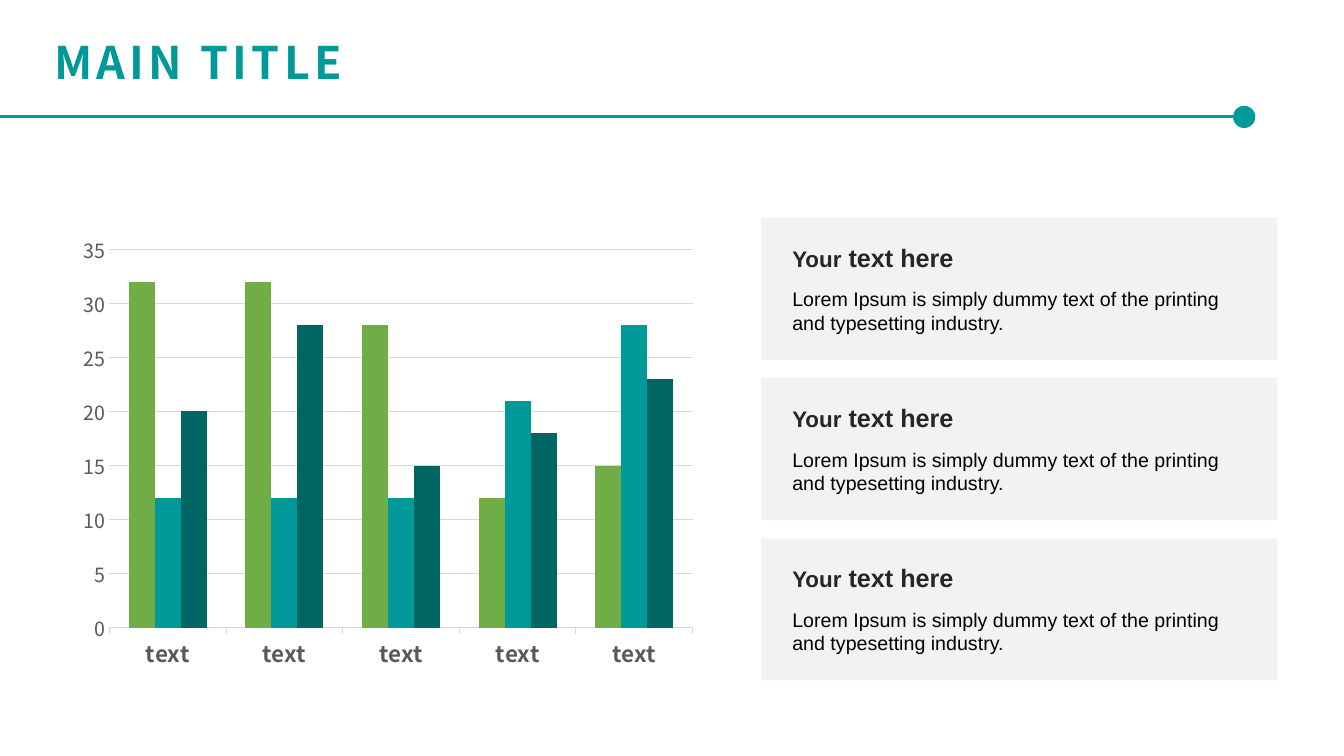
from dataclasses import dataclass

from lxml import etree
from pptx import Presentation
from pptx.chart.data import CategoryChartData
from pptx.dml.color import RGBColor
from pptx.enum.chart import XL_CHART_TYPE as ChartType, XL_TICK_MARK as TickMark
from pptx.enum.shapes import MSO_CONNECTOR as Connector, MSO_SHAPE as Shape
from pptx.enum.text import MSO_AUTO_SIZE as AutoSize
from pptx.oxml import parse_xml
from pptx.oxml.ns import nsdecls, qn
from pptx.util import Inches, Pt


@dataclass(frozen=True)
class Theme:
    teal: str = "009999"
    dark_teal: str = "006664"
    green: str = "70AD47"
    panel: str = "F2F2F2"
    grid: str = "D9D9D9"
    axis: str = "595959"
    heading: str = "262626"
    black: str = "000000"
    display_font: str = "Noto Sans CJK KR"
    text_font: str = "Arial"
    title_size: int = 32
    heading_size: int = 18
    lead_size: int = 16
    body_size: int = 14
    category_size: int = 16
    value_size: int = 14
    chart_size: int = 10


theme = Theme()


def style_font(font, name, size, color, bold=False):
    font.name = name
    font.size = Pt(size)
    font.color.rgb = RGBColor.from_string(color)
    font.bold = bold


def add_filled(kind, left, top, width, height, color):
    shape = slide.shapes.add_shape(kind, Inches(left), Inches(top), Inches(width), Inches(height))
    shape.shadow.inherit = False
    shape.fill.solid()
    shape.fill.fore_color.rgb = RGBColor.from_string(color)
    shape.line.fill.background()


deck = Presentation()
deck.slide_width = Inches(13.33)
deck.slide_height = Inches(7.5)
slide = deck.slides.add_slide(deck.slide_layouts[6])

title_box = slide.shapes.add_textbox(Inches(0.44), Inches(0.3), Inches(3.16), Inches(0.64))
title_box.text_frame.word_wrap = False
title_box.text_frame.auto_size = AutoSize.SHAPE_TO_FIT_TEXT
title_box.text_frame.text = "MAIN TITLE"
title_span = title_box.text_frame.paragraphs[0].runs[0]
style_font(title_span.font, theme.display_font, theme.title_size, theme.teal, True)
title_span.font._element.set("spc", "300")

rule = slide.shapes.add_connector(Connector.STRAIGHT, 0, Inches(1.16), Inches(12.23), Inches(1.16))
rule.line.color.rgb = RGBColor.from_string(theme.teal)
rule.line.width = Pt(2.25)
etree.SubElement(rule._element.spPr, qn("a:effectLst"))
add_filled(Shape.OVAL, 12.23, 1.05, 0.22, 0.22, theme.teal)

series_rows = [
    ("Series 1", (32, 32, 28, 12, 15), theme.green),
    ("Series 2", (12, 12, 12, 21, 28), theme.teal),
    ("Series 3", (20, 28, 15, 18, 23), theme.dark_teal),
]
chart_data = CategoryChartData()
chart_data.categories = ["text"] * 5
for name, values, color in series_rows:
    chart_data.add_series(name, values)
chart = slide.shapes.add_chart(
    ChartType.COLUMN_CLUSTERED, Inches(0.54), Inches(2.16), Inches(6.72), Inches(4.48), chart_data
).chart
chart.has_legend = False
chart.has_title = False
style_font(chart.font, theme.display_font, theme.chart_size, theme.black)

plot = chart.plots[0]
plot.gap_width = 150
plot.overlap = 0
plot.vary_by_categories = False
for series, (name, values, color) in zip(plot.series, series_rows):
    series.format.fill.solid()
    series.format.fill.fore_color.rgb = RGBColor.from_string(color)

category_axis = chart.category_axis
category_axis.major_tick_mark = TickMark.OUTSIDE
category_axis.format.line.color.rgb = RGBColor.from_string(theme.grid)
category_axis.format.line.width = Pt(0.75)
style_font(category_axis.tick_labels.font, theme.display_font, theme.category_size, theme.axis, True)

value_axis = chart.value_axis
value_axis.minimum_scale = 0
value_axis.maximum_scale = 35
value_axis.major_unit = 5
value_axis.major_tick_mark = TickMark.NONE
value_axis.format.line.fill.background()
value_axis.major_gridlines.format.line.color.rgb = RGBColor.from_string(theme.grid)
value_axis.major_gridlines.format.line.width = Pt(0.75)
style_font(value_axis.tick_labels.font, theme.display_font, theme.value_size, theme.axis)

plot_area = chart._chartSpace.chart.plotArea
for old_layout in plot_area.findall(qn("c:layout")):
    plot_area.remove(old_layout)
plot_area.insert(0, parse_xml(
    f'<c:layout {nsdecls("c")}><c:manualLayout><c:layoutTarget val="inner"/>'
    '<c:xMode val="edge"/><c:yMode val="edge"/><c:x val="0.081"/><c:y val="0.07"/>'
    '<c:w val="0.861"/><c:h val="0.84"/></c:manualLayout></c:layout>'
))

body_text = "Lorem Ipsum is simply dummy text of the printing and typesetting industry."
body_style = (theme.text_font, theme.body_size, theme.black)
lead_style = (theme.text_font, theme.lead_size, theme.heading, True)
heading_style = (theme.text_font, theme.heading_size, theme.heading, True)
panel_texts = [
    (0.64, 4.59, 0.57, [(body_text, body_style)]),
    (0.19, 1.9, 0.4, [("Your", lead_style), (" text here", heading_style)]),
]
for row in range(3):
    top = 2.16 + row * 1.59
    add_filled(Shape.RECTANGLE, 7.55, top, 5.12, 1.41, theme.panel)
    for offset, width, height, pieces in panel_texts:
        box = slide.shapes.add_textbox(Inches(7.76), Inches(top + offset), Inches(width), Inches(height))
        box.text_frame.word_wrap = True
        box.text_frame.auto_size = AutoSize.SHAPE_TO_FIT_TEXT
        para = box.text_frame.paragraphs[0]
        for text, style in pieces:
            span = para.add_run()
            span.text = text
            style_font(span.font, *style)

deck.save("out.pptx")
